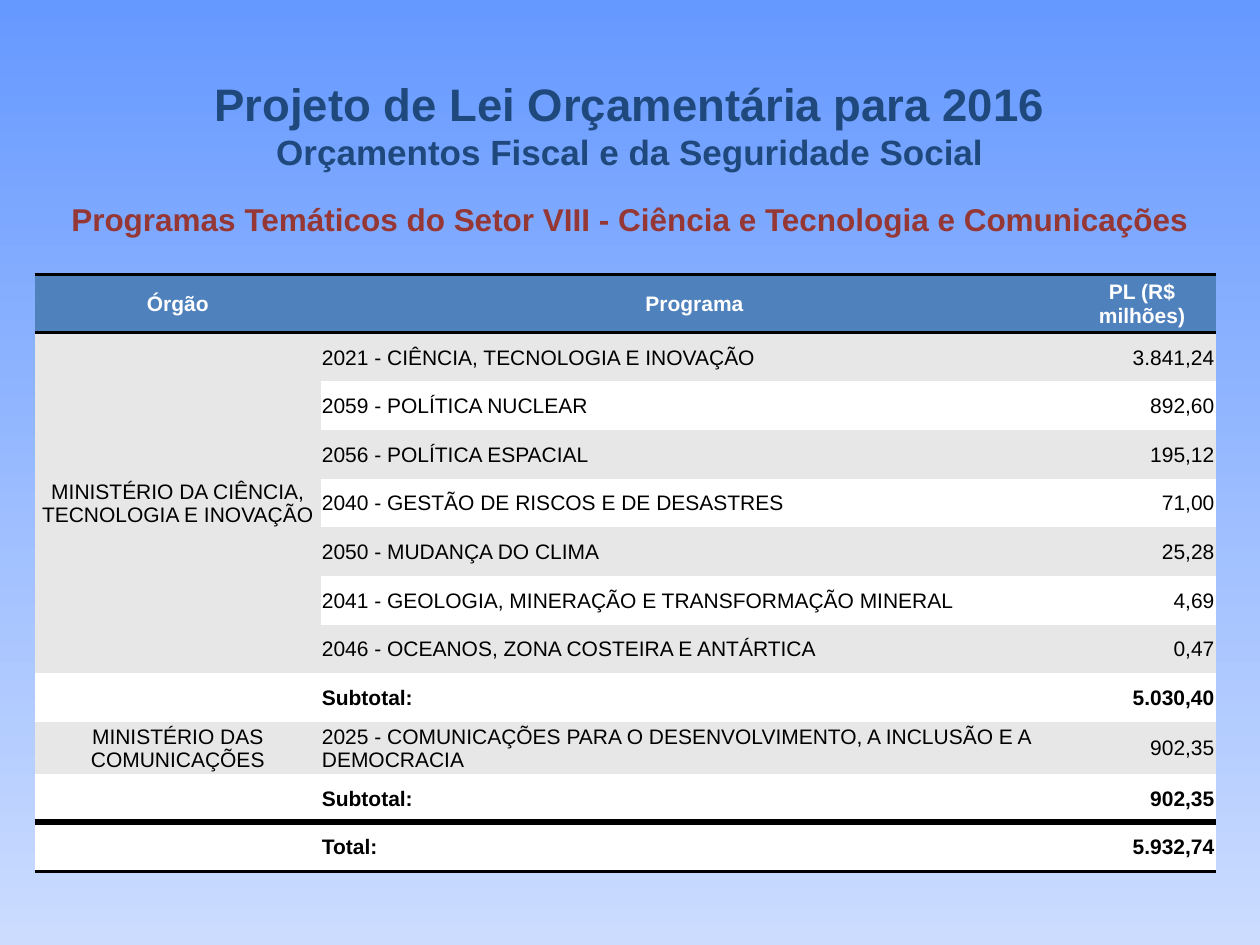
from lxml.etree import SubElement
from pptx import Presentation
from pptx.dml.color import RGBColor
from pptx.enum.text import MSO_ANCHOR, PP_ALIGN
from pptx.oxml.ns import qn
from pptx.util import Pt

COLORS = {
    "sky": "6699FF", "haze": "CBDCFF", "navy": "1F497D", "brick": "953735",
    "head": "4F81BD", "band": "E7E7E7", "white": "FFFFFF", "black": "000000",
}
FONT = "Arial"
PLAIN = "{2D5ABB26-0587-4C30-8999-92F81FD0307C}"  # no style, no grid

TITLES = [  # text, size, colour, space before
    ("Projeto de Lei Orçamentária para 2016", 26, "navy", 0),
    ("Orçamentos Fiscal e da Seguridade Social", 20, "navy", 0),
    ("Programas Temáticos do Setor VIII - Ciência e Tecnologia e Comunicações",
     18, "brick", 16),
]
ROWS = [
    ("Órgão", "Programa", "PL (R$ milhões)"),
    ("MINISTÉRIO DA CIÊNCIA, TECNOLOGIA E INOVAÇÃO",
     "2021 - CIÊNCIA, TECNOLOGIA E INOVAÇÃO", "3.841,24"),
    ("", "2059 - POLÍTICA NUCLEAR", "892,60"),
    ("", "2056 - POLÍTICA ESPACIAL", "195,12"),
    ("", "2040 - GESTÃO DE RISCOS E DE DESASTRES", "71,00"),
    ("", "2050 - MUDANÇA DO CLIMA", "25,28"),
    ("", "2041 - GEOLOGIA, MINERAÇÃO E TRANSFORMAÇÃO MINERAL", "4,69"),
    ("", "2046 - OCEANOS, ZONA COSTEIRA E ANTÁRTICA", "0,47"),
    ("", "Subtotal:", "5.030,40"),
    ("MINISTÉRIO DAS COMUNICAÇÕES",
     "2025 - COMUNICAÇÕES PARA O DESENVOLVIMENTO, A INCLUSÃO E A DEMOCRACIA",
     "902,35"),
    ("", "Subtotal:", "902,35"),
    ("", "Total:", "5.932,74"),
]
WIDTHS = (163.2, 427.3, 84.2)
ALIGNS = (PP_ALIGN.CENTER, PP_ALIGN.LEFT, PP_ALIGN.RIGHT)
HEAD_H, ROW_H = 33.1, 27.83


def rgb(name):
    return RGBColor.from_string(COLORS[name])


def add_run(para, text, size, color, bold):
    run = para.add_run()
    run.text = text
    font = run.font
    font.name, font.size, font.bold = FONT, Pt(size), bold
    font.color.rgb = rgb(color)


def paint_back(slide):
    fill = slide.background.fill
    fill.gradient()
    fill.gradient_angle = 270
    for stop, name in zip(fill.gradient_stops, ("sky", "haze")):
        stop.color.rgb = rgb(name)


def add_titles(slide, left, top, width, height):
    frame = slide.shapes.add_textbox(
        Pt(left), Pt(top), Pt(width), Pt(height)).text_frame
    frame.word_wrap = True
    frame.vertical_anchor = MSO_ANCHOR.BOTTOM
    for i, (text, size, color, gap) in enumerate(TITLES):
        para = frame.add_paragraph() if i else frame.paragraphs[0]
        para.alignment = PP_ALIGN.CENTER
        para.space_before = Pt(gap)
        add_run(para, text, size, color, True)


def rule_cell(cell, top, bottom):
    """Draw black lines above and below a cell."""
    props = cell._tc.get_or_add_tcPr()
    for i, (tag, width) in enumerate((("a:lnT", top), ("a:lnB", bottom))):
        line = SubElement(props, qn(tag), w=str(Pt(width)))
        solid = SubElement(line, qn("a:solidFill"))
        SubElement(solid, qn("a:srgbClr"), val=COLORS["black"])
        props.insert(i, line)


def fill_cell(cell, text, align, fill, color, bold):
    cell.margin_left = cell.margin_right = cell.margin_top = Pt(0.75)
    cell.margin_bottom = Pt(0)
    cell.vertical_anchor = MSO_ANCHOR.MIDDLE
    cell.fill.solid()
    cell.fill.fore_color.rgb = rgb(fill)
    if text:
        para = cell.text_frame.paragraphs[0]
        para.alignment = align
        add_run(para, text, 12, color, bold)


def add_budget(slide, left, top):
    height = HEAD_H + ROW_H * (len(ROWS) - 1)
    frame = slide.shapes.add_table(
        len(ROWS), len(WIDTHS), Pt(left), Pt(top), Pt(sum(WIDTHS)), Pt(height))
    next(frame.element.iter(qn("a:tableStyleId"))).text = PLAIN
    table = frame.table
    for col, width in zip(table.columns, WIDTHS):
        col.width = Pt(width)
    last = len(ROWS) - 1
    for r, row in enumerate(ROWS):
        head = r == 0
        table.rows[r].height = Pt(HEAD_H if head else ROW_H)
        bold = head or row[1].endswith(":")
        fill = "head" if head else "band" if r % 2 and r < last else "white"
        for c, text in enumerate(row):
            cell = table.cell(r, c)
            align = PP_ALIGN.CENTER if head else ALIGNS[c]
            fill_cell(cell, text, align, fill,
                      "white" if head else "black", bold)
            if head or r == last:
                rule_cell(cell, 2 if head else 4, 2)
    table.cell(1, 0).merge(table.cell(7, 0))


def main():
    deck = Presentation()
    deck.slide_width, deck.slide_height = Pt(720), Pt(540)
    slide = deck.slides.add_slide(deck.slide_layouts[6])
    paint_back(slide)
    add_titles(slide, 0, 38, 720, 101.5)
    add_budget(slide, 20, 157)
    deck.save("out.pptx")


if __name__ == "__main__":
    main()
